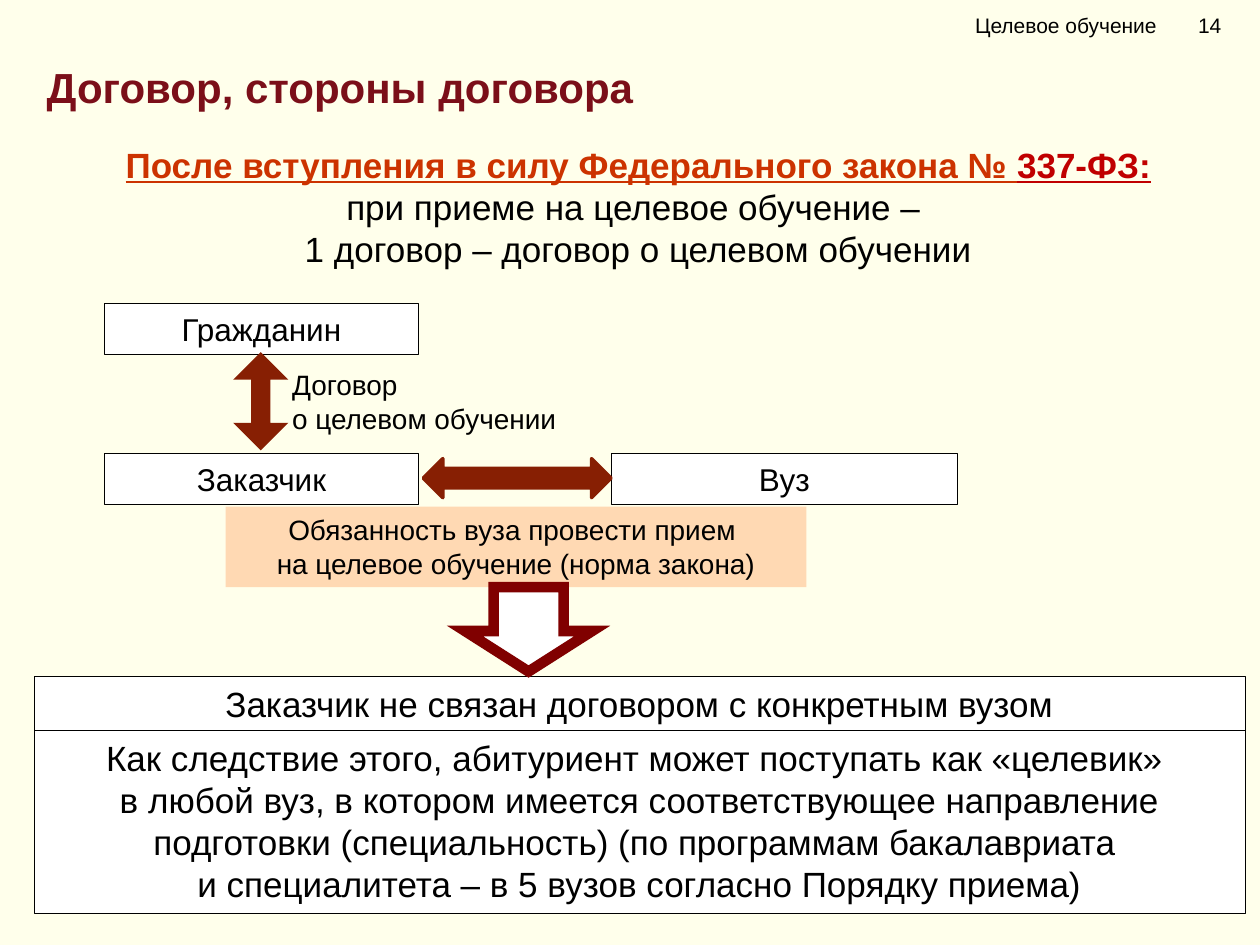
"""Build the slide on the parties to a targeted training contract."""
import pptx
import pptx.util
import pptx.dml.color
import pptx.enum.shapes
import pptx.enum.text
import pptx.oxml
from pptx.oxml.ns import nsdecls

Pt = pptx.util.Pt
KIND = pptx.enum.shapes.MSO_SHAPE
ALIGN = pptx.enum.text.PP_ALIGN
ANCHOR = pptx.enum.text.MSO_ANCHOR

HUES = {
    "back": "FFFFEB", "ink": "000000", "white": "FFFFFF", "title": "7B0F19",
    "lead": "CC3300", "law": "C00000", "arrow": "871F03", "peach": "FFD9B3",
    "edge": "800000",
}
TITLE = "Договор, стороны договора"
HEAD = "Целевое обучение\t14"
LEAD = [
    [("После вступления в силу Федерального закона № ", "lead", True), ("337-ФЗ:", "law", True)],
    ["при приеме на целевое обучение – "],
    ["1 договор – договор о целевом обучении"],
]
LABEL = [["Договор"], ["о целевом обучении"]]
DUTY = [["Обязанность вуза провести прием "], ["на целевое обучение (норма закона)"]]
RESULT = [["Заказчик не связан договором с конкретным вузом"]]
EFFECT = [
    ["Как следствие этого, абитуриент может поступать как «целевик» "],
    ["в любой вуз, в котором имеется соответствующее направление "
     "подготовки (специальность) (по программам бакалавриата "],
    ["и специалитета – в 5 вузов согласно Порядку приема)"],
]

# Every area is left, top, width, height in percent of the slide.
COL, UNI, FULL = (8.3, 24.9), (48.5, 27.5), (2.7, 96.1)
TOP, MID, ROW = 32.13, 48, 5.33
BOXES = [
    (UNI, MID, ROW, [["Вуз"]], 18, "white", True),
    (COL, MID, ROW, [["Заказчик"]], 18, "white", True),
    (COL, TOP, ROW, [["Гражданин"]], 18, "white", True),
    ((17.9, 46.1), 53.6, 8.53, DUTY, 16, "peach", False),
    (FULL, 71.6, 5.87, RESULT, 20, "white", True),
    (FULL, 77.33, 19.33, EFFECT, 20, "white", True),
]
ARROWS = [
    (KIND.UP_DOWN_ARROW, (18.85, 37.53, 3.7, 9.87), (0.5, 0.34), "arrow", "arrow", 2, "miter"),
    (KIND.LEFT_RIGHT_ARROW, (33.6, 48.53, 14.9, 4.13), (0.5, 0.5), "arrow", "arrow", 2, "round"),
    (KIND.DOWN_ARROW, (36.9, 62.13, 10.1, 8.93), (0.55, 0.48), "white", "edge", 6, "miter"),
]
TEXTS = [
    ((22.2, 38.27, 26.9, 8.53), LABEL, 16, ALIGN.LEFT),
    ((2.4, 14.53, 96.5, 14.8), LEAD, 20, ALIGN.CENTER),
]

deck = pptx.Presentation()
deck.slide_width, deck.slide_height = pptx.util.Inches(10), pptx.util.Inches(7.5)
slide = deck.slides.add_slide(deck.slide_layouts[5])


def hue(name):
    return pptx.dml.color.RGBColor.from_string(HUES[name])


def area(left, top, width, height):
    wide, high = deck.slide_width / 100, deck.slide_height / 100
    return [round(v) for v in (left * wide, top * high, width * wide, height * high)]


def paint(shape, fill, line=None, width=0):
    shape.shadow.inherit = False
    shape.fill.solid()
    shape.fill.fore_color.rgb = hue(fill)
    if line:
        shape.line.color.rgb = hue(line)
        shape.line.width = Pt(width)
    else:
        shape.line.fill.background()


def write(shape, paras, size, align, anchor=ANCHOR.TOP):
    frame = shape.text_frame
    frame.word_wrap = True
    frame.auto_size = pptx.enum.text.MSO_AUTO_SIZE.NONE
    frame.vertical_anchor = anchor
    for i, runs in enumerate(paras):
        para = frame.add_paragraph() if i else frame.paragraphs[0]
        para.alignment = align
        for item in runs:
            text, tint, bold = (item, "ink", False) if isinstance(item, str) else item
            run = para.add_run()
            run.text = text
            font = run.font
            font.name, font.size, font.bold = "Arial", Pt(size), bold
            font.underline = bold and tint != "title"
            font.color.rgb = hue(tint)
    return frame


def text(place, paras, size, align, anchor=ANCHOR.TOP):
    return write(slide.shapes.add_textbox(*area(*place)), paras, size, align, anchor)


slide.background.fill.solid()
slide.background.fill.fore_color.rgb = hue("back")

title = slide.shapes.title
title.left, title.top, title.width, title.height = area(2.7, 5.87, 92.9, 6.27)
write(title, [[(TITLE, "title", True)]], 24, ALIGN.LEFT)

for (left, width), top, height, paras, size, fill, edge in BOXES:
    box = slide.shapes.add_shape(KIND.RECTANGLE, *area(left, top, width, height))
    paint(box, fill, "ink" if edge else None, 0.25)
    write(box, paras, size, ALIGN.CENTER)

for kind, place, bends, fill, edge, width, join in ARROWS:
    arrow = slide.shapes.add_shape(kind, *area(*place))
    for i, bend in enumerate(bends):
        arrow.adjustments[i] = bend
    paint(arrow, fill, edge, width)
    arrow.line._get_or_add_ln().append(pptx.oxml.parse_xml(f"<a:{join} {nsdecls('a')}/>"))

for row in TEXTS:
    text(*row)

head = text((76.4, 0, 23.6, 5.33), [[HEAD]], 12, ALIGN.LEFT, ANCHOR.MIDDLE)
stop = pptx.util.Inches(1.77)
head.paragraphs[0]._p.get_or_add_pPr().append(pptx.oxml.parse_xml(
    f'<a:tabLst {nsdecls("a")}><a:tab pos="{stop}" algn="l"/></a:tabLst>'))

deck.save("out.pptx")
